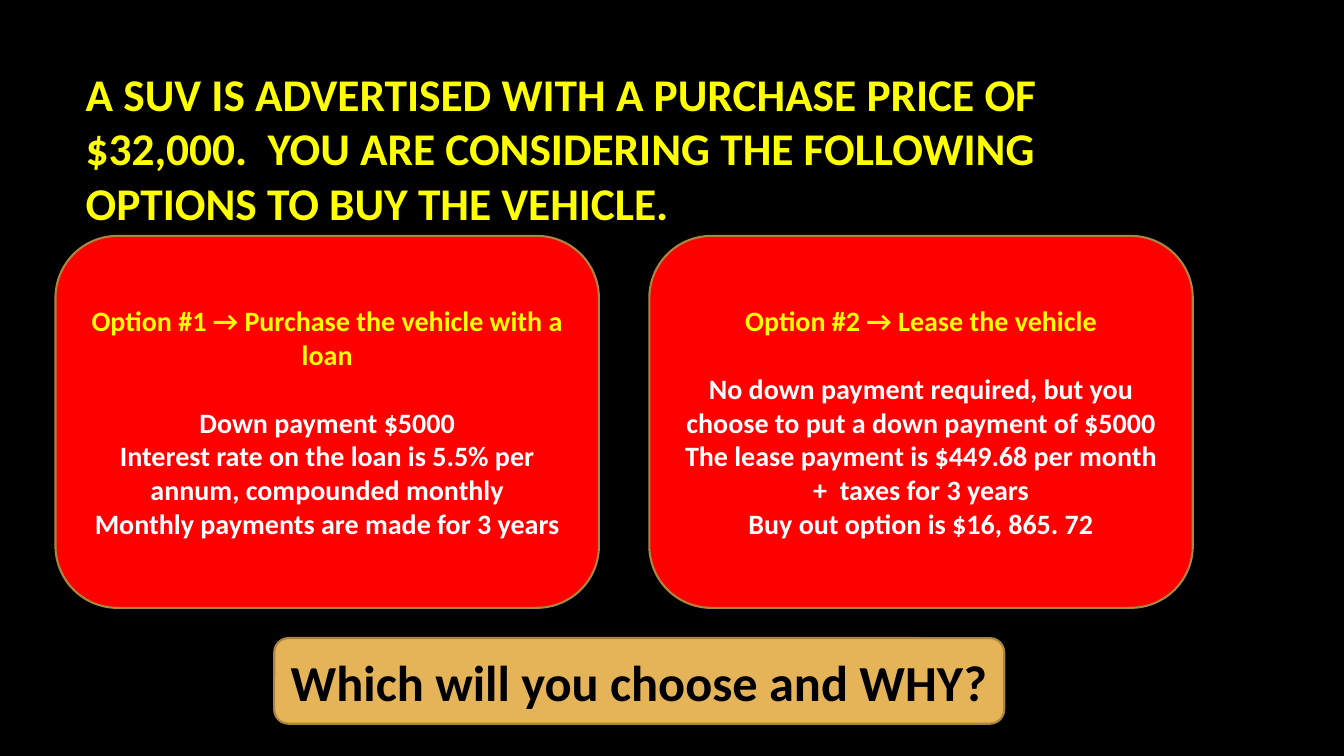
from dataclasses import dataclass

from pptx import Presentation
from pptx.dml.color import RGBColor
from pptx.enum.shapes import MSO_SHAPE as Shape
from pptx.enum.text import MSO_ANCHOR as Anchor, MSO_AUTO_SIZE as AutoSize, PP_ALIGN as Align
from pptx.util import Inches, Pt

HEADLINE = (
    "A SUV IS ADVERTISED WITH A PURCHASE PRICE OF $32,000.  "
    "YOU ARE CONSIDERING THE FOLLOWING OPTIONS TO BUY THE VEHICLE."
)
OPTIONS = [
    (
        "Option #1 → Purchase the vehicle with a loan",
        [
            "Down payment $5000",
            "Interest rate on the loan is 5.5% per annum, compounded monthly",
            "Monthly payments are made for 3 years",
        ],
    ),
    (
        "Option #2 → Lease the vehicle",
        [
            "No down payment required, but you choose to put a down payment of $5000",
            "The lease payment is $449.68 per month +  taxes for 3 years",
            "Buy out option is $16, 865. 72",
        ],
    ),
]
QUESTION = "Which will you choose and WHY?"


@dataclass(frozen=True)
class Theme:
    font: str = "Calibri"
    background: str = "000000"
    accent: str = "FFFF00"
    card: str = "FF0000"
    card_text: str = "FFFFFF"
    banner: str = "E5B458"
    banner_text: str = "000000"
    outline: str = "A98541"
    outline_width: float = 1.5
    headline_size: float = 32.4
    card_size: float = 20
    card_gap: float = 24.4
    question_size: float = 36


THEME = Theme()
SLIDE_W, SLIDE_H = 13.33, 7.5
LEFT, RIGHT = 0.55, 11.83
GUTTER = 0.5
CARD_W = (RIGHT - LEFT - GUTTER * (len(OPTIONS) - 1)) / len(OPTIONS)
CARD_TOP, CARD_H = 2.34, 3.69
HEADLINE_BOX = (0.75, 0.67, RIGHT - 0.75, 1.59)
QUESTION_BOX = (2.72, 6.33, 7.24, 0.85)


def rgb(value):
    return RGBColor.from_string(value)


def style(paragraph, size, color, align):
    paragraph.alignment = align
    for run in paragraph.runs:
        run.font.name = THEME.font
        run.font.size = Pt(size)
        run.font.bold = True
        run.font.color.rgb = rgb(color)


def add_panel(slide, box, fill, text):
    panel = slide.shapes.add_shape(Shape.ROUNDED_RECTANGLE, *map(Inches, box))
    panel.shadow.inherit = False
    panel.fill.solid()
    panel.fill.fore_color.rgb = rgb(fill)
    panel.line.color.rgb = rgb(THEME.outline)
    panel.line.width = Pt(THEME.outline_width)
    frame = panel.text_frame
    frame.word_wrap = True
    frame.vertical_anchor = Anchor.MIDDLE
    frame.text = text
    return frame.paragraphs


def add_headline(slide):
    headline = slide.shapes.title
    headline.left, headline.top, headline.width, headline.height = map(Inches, HEADLINE_BOX)
    frame = headline.text_frame
    frame.text = HEADLINE
    frame.word_wrap = True
    frame.auto_size = AutoSize.NONE
    frame.vertical_anchor = Anchor.MIDDLE
    style(frame.paragraphs[0], THEME.headline_size, THEME.accent, Align.LEFT)


def add_option(slide, column, heading, terms):
    box = (LEFT + column * (CARD_W + GUTTER), CARD_TOP, CARD_W, CARD_H)
    title, *details = add_panel(slide, box, THEME.card, "\n".join([heading, *terms]))
    style(title, THEME.card_size, THEME.accent, Align.CENTER)
    title.space_after = Pt(THEME.card_gap)
    for detail in details:
        style(detail, THEME.card_size, THEME.card_text, Align.CENTER)


def main():
    deck = Presentation()
    deck.slide_width, deck.slide_height = Inches(SLIDE_W), Inches(SLIDE_H)
    slide = deck.slides.add_slide(deck.slide_layouts[5])
    slide.background.fill.solid()
    slide.background.fill.fore_color.rgb = rgb(THEME.background)

    add_headline(slide)
    for column, (heading, terms) in enumerate(OPTIONS):
        add_option(slide, column, heading, terms)
    question = add_panel(slide, QUESTION_BOX, THEME.banner, QUESTION)[0]
    style(question, THEME.question_size, THEME.banner_text, Align.CENTER)

    deck.save("out.pptx")


if __name__ == "__main__":
    main()
